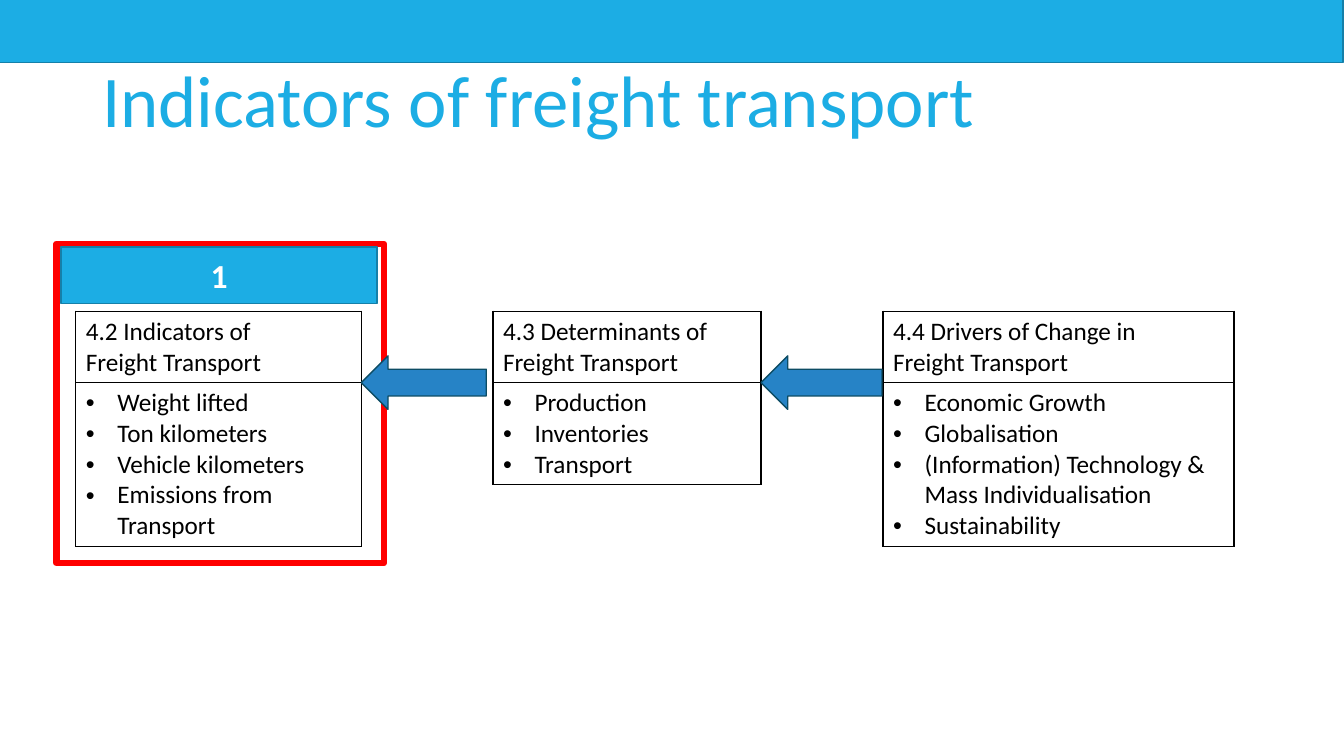
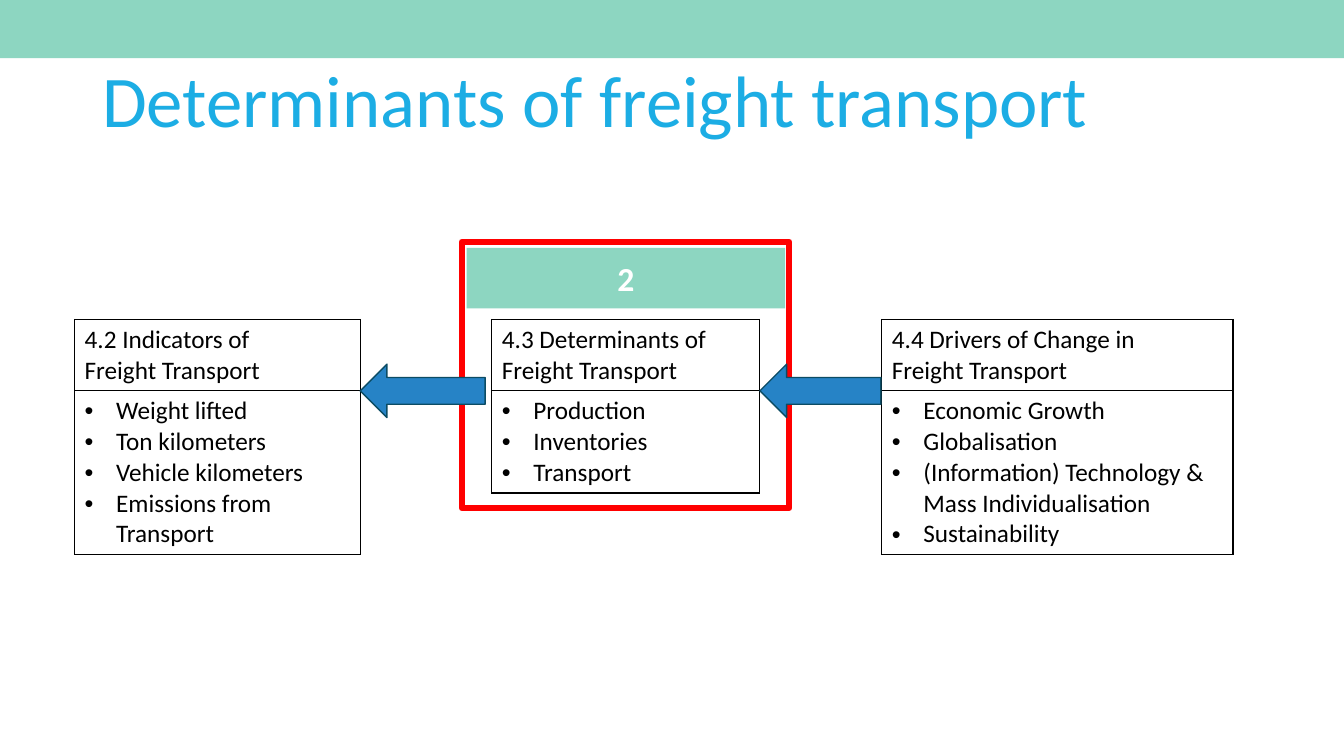
from dataclasses import dataclass

from lxml.etree import SubElement
from pptx import Presentation
from pptx.dml.color import RGBColor
from pptx.enum.shapes import MSO_SHAPE
from pptx.enum.text import MSO_ANCHOR, PP_ALIGN
from pptx.oxml.ns import qn
from pptx.util import Pt


@dataclass(frozen=True)
class Theme:
    font: str = "Calibri"
    blue: str = "1CADE4"
    blue_edge: str = "1580A9"
    mint: str = "8DD6C1"
    red: str = "FF0000"
    arrow: str = "2683C6"
    arrow_edge: str = "0C4C64"
    black: str = "000000"
    white: str = "FFFFFF"
    title_size: float = 52
    number_size: float = 24
    body_size: float = 18


THEME = Theme()
PAGE_WIDTH, PAGE_HEIGHT = 960, 540
LINE_HEIGHT, CELL_PADDING = 22, 7
HEADER_HEIGHT = 2 * LINE_HEIGHT + CELL_PADDING
BULLET_INDENT = 22.5
ARROW_HEIGHT = 38.2


@dataclass(frozen=True)
class Topic:
    offset: float
    width: float
    heading: str
    items: tuple
    lines: int
    arrow_width: float = 0


TOPICS = (
    Topic(0, 204, "4.2 Indicators of \vFreight Transport",
          ("Weight lifted", "Ton kilometers", "Vehicle kilometers",
           "Emissions from Transport"), 5, 89.3),
    Topic(298, 191.5, "4.3 Determinants of Freight Transport",
          ("Production", "Inventories", "Transport"), 3, 86.4),
    Topic(576.6, 250.8, "4.4 Drivers of Change in \vFreight Transport",
          ("Economic Growth", "Globalisation",
           "(Information) Technology & Mass Individualisation",
           "Sustainability"), 5),
)


@dataclass(frozen=True)
class Section:
    title: str
    number: str
    colour: str
    edge: str | None
    top_band: tuple
    frame: tuple
    number_band: tuple
    diagram: tuple


SECTIONS = (
    Section("Indicators of freight transport", "1", THEME.blue, THEME.blue_edge,
            (-0.7, -1.4, PAGE_WIDTH, 46), (40.3, 174.2, 234, 228),
            (43.7, 176.4, 225.6, 40.3), (54.1, 222.3)),
    Section("Determinants of freight transport", "2", THEME.mint, None,
            (0, -1.4, PAGE_WIDTH, 43), (329.8, 172.8, 234, 190),
            (333.4, 177.1, 227.5, 43.2), (53.3, 228.2)),
)


class DeckBuilder:
    def __init__(self, theme):
        self.theme = theme
        self.deck = Presentation()
        self.deck.slide_width, self.deck.slide_height = Pt(PAGE_WIDTH), Pt(PAGE_HEIGHT)
        self.page = None

    def new_page(self):
        self.page = self.deck.slides.add_slide(self.deck.slide_layouts[6])

    def set_text(self, para, text, size, colour, bold=False):
        para.text = text
        formats = {"name": self.theme.font, "size": Pt(size), "bold": bold}
        for span in para.runs:
            for name, value in formats.items():
                setattr(span.font, name, value)
            span.font.color.rgb = RGBColor.from_string(colour)

    def title(self, text):
        box = self.page.shapes.add_textbox(Pt(66), Pt(14.4), Pt(828), Pt(119))
        box.text_frame.word_wrap = True
        box.text_frame.vertical_anchor = MSO_ANCHOR.MIDDLE
        para = box.text_frame.paragraphs[0]
        for name, value in {"line_spacing": 0.9, "space_after": Pt(6)}.items():
            setattr(para, name, value)
        self.set_text(para, text, self.theme.title_size, self.theme.blue)

    def shape(self, bounds, fill=None, edge=None, edge_width=1, kind=MSO_SHAPE.RECTANGLE):
        shape = self.page.shapes.add_shape(kind, *map(Pt, bounds))
        shape.shadow.inherit = False
        for target, colour in ((shape.fill, fill), (shape.line.fill, edge)):
            if colour is None:
                target.background()
            else:
                target.solid()
                target.fore_color.rgb = RGBColor.from_string(colour)
        if edge:
            shape.line.width = Pt(edge_width)
        return shape

    def number_band(self, bounds, number, fill, edge):
        band = self.shape(bounds, fill, edge)
        band.text_frame.vertical_anchor = MSO_ANCHOR.MIDDLE
        para = band.text_frame.paragraphs[0]
        para.alignment = PP_ALIGN.CENTER
        self.set_text(para, number, self.theme.number_size, self.theme.white, bold=True)

    def style_cell(self, cell):
        properties = cell._tc.get_or_add_tcPr()
        for side in ("a:lnL", "a:lnR", "a:lnT", "a:lnB"):
            border = SubElement(properties, qn(side), w=str(Pt(1)))
            fill = SubElement(border, qn("a:solidFill"))
            SubElement(fill, qn("a:srgbClr"), val=self.theme.black)
        cell.fill.solid()
        cell.fill.fore_color.rgb = RGBColor.from_string(self.theme.white)

    def bullet(self, para):
        properties = para._p.get_or_add_pPr()
        properties.set("marL", str(Pt(BULLET_INDENT)))
        properties.set("indent", str(-Pt(BULLET_INDENT)))
        SubElement(properties, qn("a:buFont"), typeface="Arial")
        SubElement(properties, qn("a:buChar"), char="•")

    def topic_table(self, topic, left, top):
        heights = (HEADER_HEIGHT, topic.lines * LINE_HEIGHT + CELL_PADDING)
        table = self.page.shapes.add_table(
            2, 1, Pt(left), Pt(top), Pt(topic.width), Pt(sum(heights))).table
        for name in ("first_row", "horz_banding"):
            setattr(table, name, False)
        for row, height in zip(table.rows, heights):
            row.height = Pt(height)
            self.style_cell(row.cells[0])
        size, colour = self.theme.body_size, self.theme.black
        self.set_text(table.cell(0, 0).text_frame.paragraphs[0], topic.heading, size, colour)
        frame = table.cell(1, 0).text_frame
        for index, item in enumerate(topic.items):
            para = frame.add_paragraph() if index else frame.paragraphs[0]
            self.bullet(para)
            self.set_text(para, item, size, colour)

    def diagram(self, left, top):
        """Draw the topic tables, then the arrows pointing back along the chain."""
        for topic in TOPICS:
            self.topic_table(topic, left + topic.offset, top)
        arrow_top = top + HEADER_HEIGHT - ARROW_HEIGHT / 2
        for topic in TOPICS[:-1]:
            arrow_left = left + topic.offset + topic.width
            self.shape((arrow_left, arrow_top, topic.arrow_width, ARROW_HEIGHT),
                       self.theme.arrow, self.theme.arrow_edge, kind=MSO_SHAPE.LEFT_ARROW)

    def section(self, section):
        self.new_page()
        self.title(section.title)
        self.shape(section.frame, edge=self.theme.red, edge_width=4.5)
        self.number_band(section.number_band, section.number, section.colour, section.edge)
        self.shape(section.top_band, section.colour, section.edge)
        self.diagram(*section.diagram)


def main():
    builder = DeckBuilder(THEME)
    for section in SECTIONS:
        builder.section(section)
    builder.deck.save("out.pptx")


if __name__ == "__main__":
    main()
